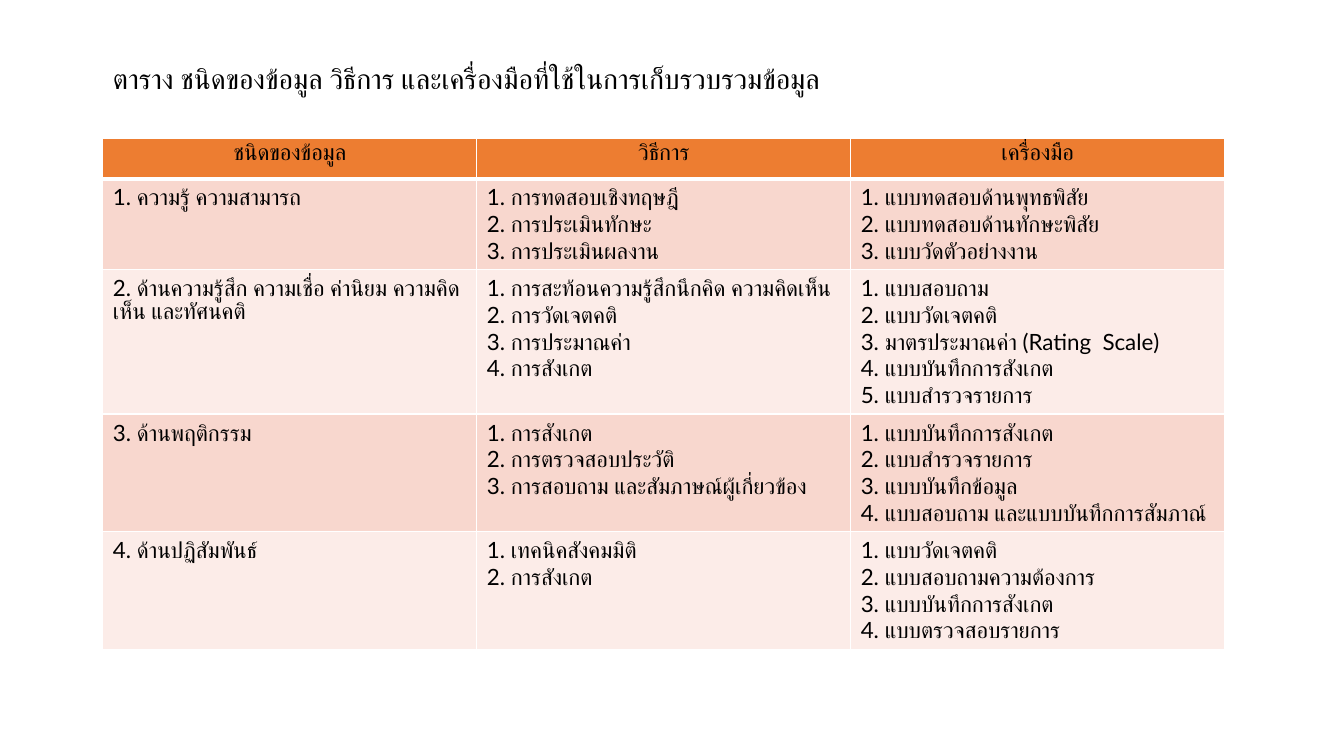
from lxml.etree import SubElement
from pptx import Presentation
from pptx.dml.color import RGBColor as Rgb
from pptx.enum.text import MSO_ANCHOR as Anchor, PP_ALIGN as Align
from pptx.oxml.ns import qn
from pptx.util import Pt

# Content
TITLE = "ตาราง ชนิดของข้อมูล วิธีการ และเครื่องมือที่ใช้ในการเก็บรวบรวมข้อมูล"
HEADERS = ["ชนิดของข้อมูล", "วิธีการ", "เครื่องมือ"]
ROWS = [
    (["1. ความรู้ ความสามารถ"],
     ["1. การทดสอบเชิงทฤษฎี", "2. การประเมินทักษะ", "3. การประเมินผลงาน"],
     ["1. แบบทดสอบด้านพุทธพิสัย", "2. แบบทดสอบด้านทักษะพิสัย", "3. แบบวัดตัวอย่างงาน"]),
    (["2. ด้านความรู้สึก ความเชื่อ ค่านิยม ความคิดเห็น และทัศนคติ"],
     ["1. การสะท้อนความรู้สึกนึกคิด ความคิดเห็น", "2. การวัดเจตคติ",
      "3. การประมาณค่า", "4. การสังเกต"],
     ["1. แบบสอบถาม", "2. แบบวัดเจตคติ", "3. มาตรประมาณค่า (Rating  Scale)",
      "4. แบบบันทึกการสังเกต", "5. แบบสำรวจรายการ"]),
    (["3. ด้านพฤติกรรม"],
     ["1. การสังเกต", "2. การตรวจสอบประวัติ", "3. การสอบถาม และสัมภาษณ์ผู้เกี่ยวข้อง"],
     ["1. แบบบันทึกการสังเกต", "2. แบบสำรวจรายการ", "3. แบบบันทึกข้อมูล",
      "4. แบบสอบถาม และแบบบันทึกการสัมภาณ์"]),
    (["4. ด้านปฏิสัมพันธ์"],
     ["1. เทคนิคสังคมมิติ", "2. การสังเกต"],
     ["1. แบบวัดเจตคติ", "2. แบบสอบถามความต้องการ", "3. แบบบันทึกการสังเกต",
      "4. แบบตรวจสอบรายการ"]),
]

THEME = {
    "font": "Lato", "title_size": 20, "cell_size": 16,
    "text": "000000", "header": "ED7D31", "bands": ["F8D7CE", "FCECE8"],
    "border": "FFFFFF", "border_width": 1, "header_border_width": 3,
}

# Layout in points
LEFT, TITLE_TOP, TABLE_TOP = 73.5, 43.2, 98.6
TITLE_WIDTH, TITLE_HEIGHT = 828, 40
COLUMN_WIDTH, HEADER_HEIGHT = 267.1, 29.2
LINE_HEIGHT, CELL_PADDING = 19.2, 7.2


def set_all(target, values):
    for name, value in values.items():
        setattr(target, name, value)


def write_lines(frame, lines, size, **para_format):
    frame.text = "\n".join(lines)
    for para in frame.paragraphs:
        set_all(para, para_format)
        for span in para.runs:
            set_all(span.font, {"name": THEME["font"], "size": Pt(size), "bold": False})
            span.font.color.rgb = Rgb.from_string(THEME["text"])


def add_borders(cell, bottom_width):
    properties = cell._tc.get_or_add_tcPr()
    width = THEME["border_width"]
    sides = {"lnL": width, "lnR": width, "lnT": width, "lnB": bottom_width}
    for position, (side, points) in enumerate(sides.items()):
        line = SubElement(properties, qn("a:" + side), w=str(Pt(points)))
        fill = SubElement(line, qn("a:solidFill"))
        SubElement(fill, qn("a:srgbClr"), val=THEME["border"])
        properties.insert(position, line)


def fill_row(table, index, contents, colour, align, bottom_width):
    for cell, lines in zip(table.rows[index].cells, contents):
        write_lines(cell.text_frame, lines, THEME["cell_size"], alignment=align)
        cell.fill.solid()
        cell.fill.fore_color.rgb = Rgb.from_string(colour)
        add_borders(cell, bottom_width)


def main():
    deck = Presentation()
    set_all(deck, {"slide_width": Pt(960), "slide_height": Pt(540)})
    page = deck.slides.add_slide(deck.slide_layouts[5])

    # Title
    title = page.shapes.title
    set_all(title, {"left": Pt(LEFT), "top": Pt(TITLE_TOP),
                    "width": Pt(TITLE_WIDTH), "height": Pt(TITLE_HEIGHT)})
    set_all(title.text_frame, {"vertical_anchor": Anchor.TOP, "word_wrap": True})
    write_lines(title.text_frame, [TITLE], THEME["title_size"], alignment=Align.LEFT,
                line_spacing=0.9, space_before=Pt(10))

    # Table: each row is as tall as its longest cell
    heights = [HEADER_HEIGHT] + [
        CELL_PADDING + LINE_HEIGHT * max(map(len, row)) for row in ROWS]
    table = page.shapes.add_table(
        len(heights), len(HEADERS), Pt(LEFT), Pt(TABLE_TOP),
        Pt(COLUMN_WIDTH * len(HEADERS)), Pt(sum(heights))).table
    for column in table.columns:
        column.width = Pt(COLUMN_WIDTH)
    for row, height in zip(table.rows, heights):
        row.height = Pt(height)

    fill_row(table, 0, [[header] for header in HEADERS], THEME["header"],
             Align.CENTER, THEME["header_border_width"])
    for index, contents in enumerate(ROWS):
        band = THEME["bands"][index % 2]
        fill_row(table, index + 1, contents, band, Align.LEFT, THEME["border_width"])

    deck.save("out.pptx")


if __name__ == "__main__":
    main()
